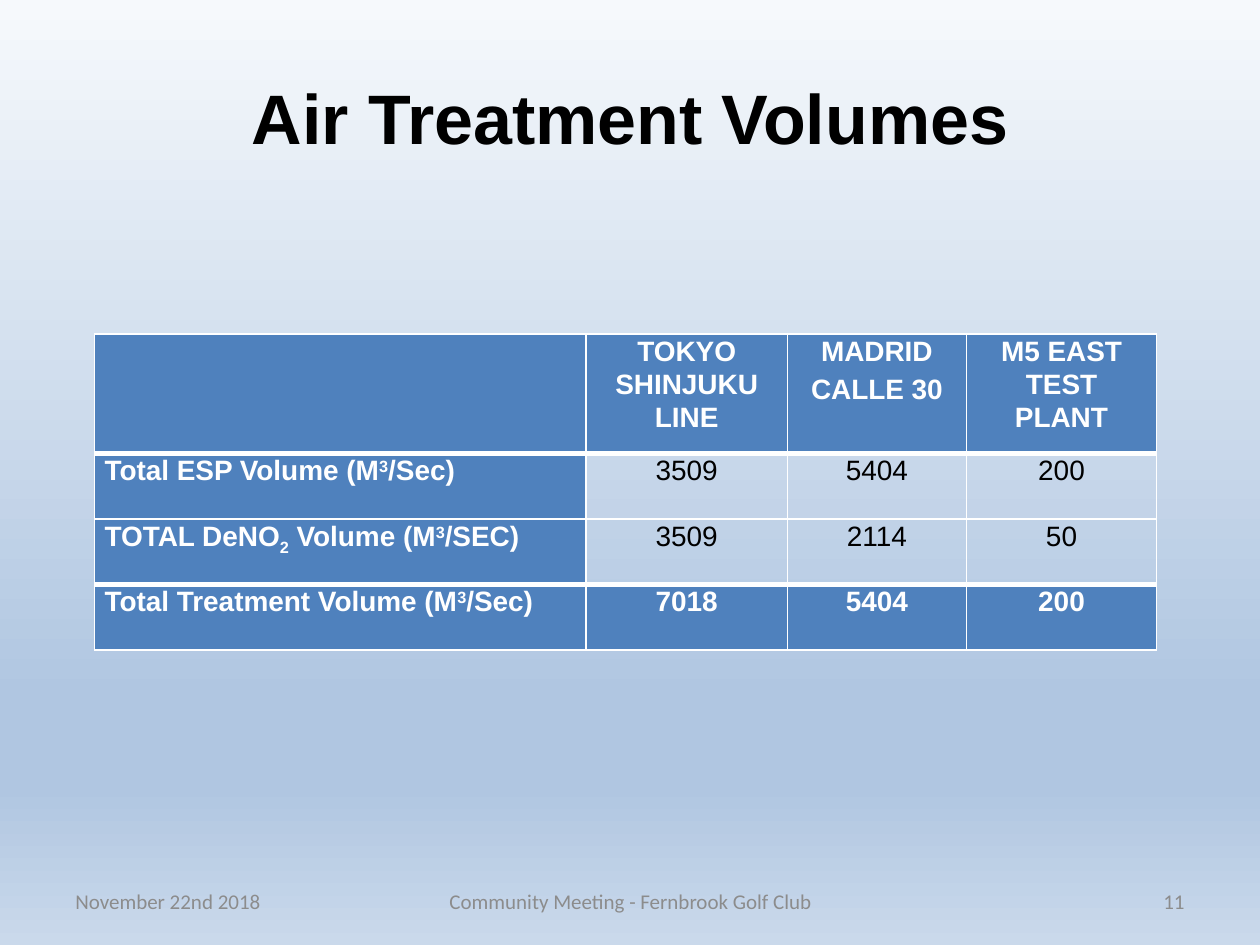
from lxml.etree import SubElement as Sub
from pptx import Presentation
from pptx.dml.color import RGBColor as RGB
from pptx.enum.text import MSO_ANCHOR as Anchor, PP_ALIGN as Align
from pptx.oxml.ns import qn
from pptx.util import Inches, Pt

BLACK = RGB(0x00, 0x00, 0x00)
WHITE = RGB(0xFF, 0xFF, 0xFF)
BLUE = RGB(0x4F, 0x81, 0xBD)
GREY = RGB(0x8C, 0x8C, 0x8C)
SKY = [
    (0, RGB(0xF6, 0xF9, 0xFC)),
    (74, RGB(0xB0, 0xC6, 0xE1)),
    (83, RGB(0xB0, 0xC6, 0xE1)),
    (100, RGB(0xCA, 0xD9, 0xEB)),
]
SUP, LOW = 30, -25  # baseline shift in percent


class Deck:
    font = "Arial"
    small = "Calibri"

    def __init__(self, wide, high):
        self.prs = Presentation()
        self.prs.slide_width = Inches(wide)
        self.prs.slide_height = Inches(high)
        self.slide = self.prs.slides.add_slide(self.prs.slide_layouts[6])

    def back(self, stops):
        fill = self.slide.background.fill
        fill.gradient()
        fill.gradient_angle = 270
        root = self.slide.background._cSld.find(".//" + qn("a:gsLst"))
        for old in list(root):
            root.remove(old)
        for pos, tone in stops:
            stop = Sub(root, qn("a:gs"), pos=str(pos * 1000))
            Sub(stop, qn("a:srgbClr"), val=str(tone))

    def run(self, para, text, size, color, bold=False, font=None, base=0):
        run = para.add_run()
        run.text = text
        run.font.name = font or self.font
        run.font.size = Pt(size)
        run.font.bold = bold
        run.font.color.rgb = color
        if base:
            run.font._element.set("baseline", str(base * 1000))

    def text(self, box, text, size, color, align, bold=False, font=None):
        frame = self.slide.shapes.add_textbox(*map(Inches, box)).text_frame
        frame.word_wrap = True
        frame.vertical_anchor = Anchor.MIDDLE
        para = frame.paragraphs[0]
        para.alignment = align
        self.run(para, text, size, color, bold, font)

    def table(self, left, top, cols, rows):
        shape = self.slide.shapes.add_table(
            len(rows), len(cols), Inches(left), Inches(top),
            Inches(sum(cols)), Inches(sum(rows)))
        grid = shape.table
        grid.first_row = grid.horz_banding = False
        for col, wide in zip(grid.columns, cols):
            col.width = Inches(wide)
        for row, high in zip(grid.rows, rows):
            row.height = Inches(high)
        return grid

    def cell(self, cell, paras, align, solid, gaps, edges):
        cell.margin_left = cell.margin_right = Inches(0.08)
        cell.margin_top = cell.margin_bottom = 0
        props = cell._tc.get_or_add_tcPr()
        for side, width in zip("LRTB", edges):
            line = Sub(props, qn("a:ln" + side), w=str(Pt(width)))
            paint = Sub(line, qn("a:solidFill"))
            Sub(paint, qn("a:srgbClr"), val=str(WHITE))
        if solid:
            cell.fill.solid()
            cell.fill.fore_color.rgb = BLUE
        else:
            cell.fill.background()
        frame = cell.text_frame
        for i, (runs, gap) in enumerate(zip(paras, gaps)):
            para = frame.add_paragraph() if i else frame.paragraphs[0]
            para.alignment = align
            para.line_spacing = 1.07
            para.space_before, para.space_after = map(Pt, gap)
            for text, base in runs:
                self.run(para, text, 16, WHITE if solid else BLACK,
                         solid, base=base)


def plain(text):
    return [(text, 0)]


def cubic(start, unit):
    return [(start + " (M", 0), ("3", SUP), (unit, 0)]


def main():
    deck = Deck(10, 7.5)
    deck.back(SKY)

    # Title
    deck.text((0.5, 0.3, 9, 1.25), "Air Treatment Volumes", 40, BLACK,
              Align.CENTER, bold=True)

    # Table content: each cell is a list of paragraphs
    heads = [[], ["TOKYO", "SHINJUKU LINE"], ["MADRID", "CALLE 30"],
             ["M5 EAST TEST PLANT"]]
    deno = [("TOTAL DeNO", 0), ("2", LOW)] + cubic(" Volume", "/SEC)")
    body = [
        (cubic("Total ESP Volume", "/Sec)"), [3509, 5404, 200]),
        (deno, [3509, 2114, 50]),
        (cubic("Total Treatment Volume", "/Sec)"), [7018, 5404, 200]),
    ]
    rows = [[[plain(word) for word in head] for head in heads]]
    for label, nums in body:
        rows.append([[label]] + [[plain(str(num))] for num in nums])

    # Table: thick rules under the heads and above the totals
    rules = [1, 3, 1, 3, 1]
    last = len(rows) - 1
    grid = deck.table(0.75, 2.65, [3.9, 1.6, 1.42, 1.51],
                      [0.95] + [0.52] * last)
    for r, row in enumerate(rows):
        for c, paras in enumerate(row):
            gaps = [(6, 6)] if r else [(3, 0), (0, 3) if c == 1 else (3, 0)]
            deck.cell(grid.cell(r, c), paras,
                      Align.CENTER if c and paras else Align.LEFT,
                      r in (0, last) or c == 0, gaps,
                      (1, 1, rules[r], rules[r + 1]))

    # Footer
    for left, wide, text, align in [
        (0.5, 2.33, "November 22nd 2018", Align.LEFT),
        (3.42, 3.17, "Community Meeting - Fernbrook Golf Club", Align.CENTER),
        (7.17, 2.33, "11", Align.RIGHT),
    ]:
        deck.text((left, 6.95, wide, 0.4), text, 12, GREY, align,
                  font=deck.small)

    deck.prs.save("out.pptx")


if __name__ == "__main__":
    main()
